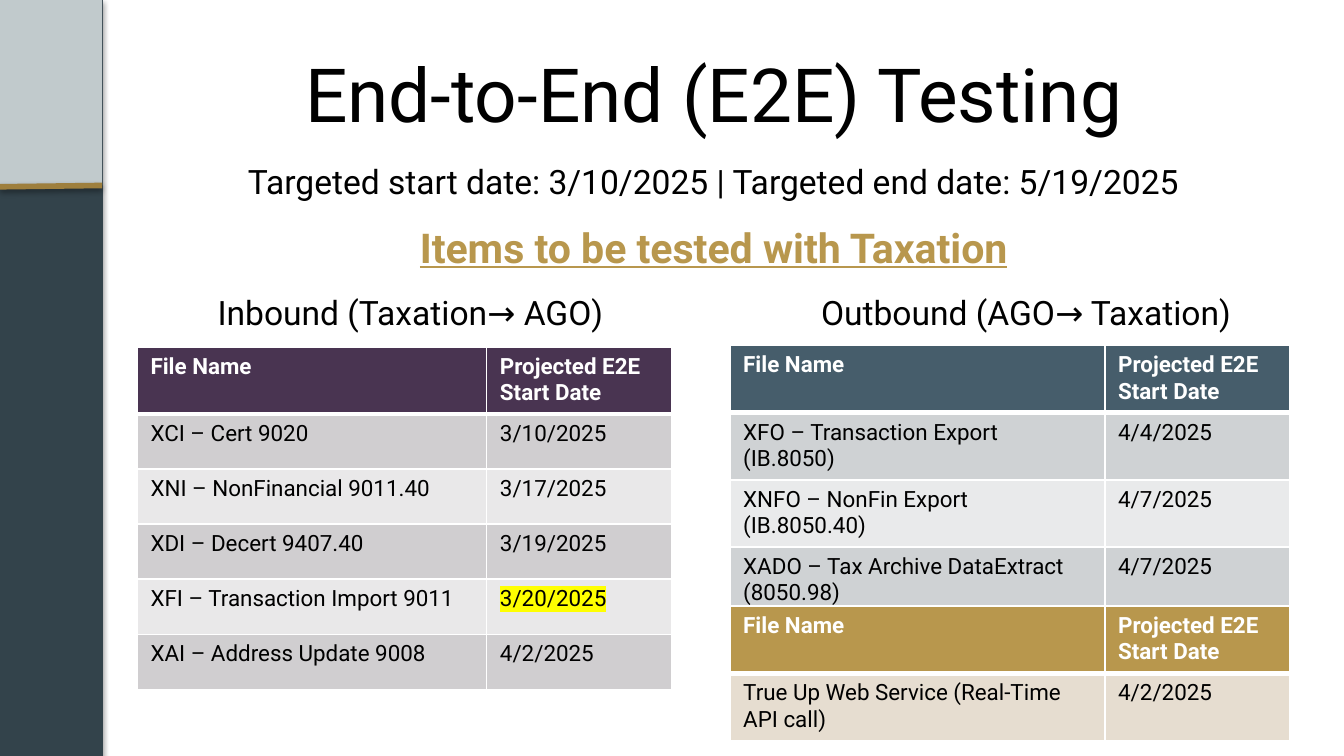
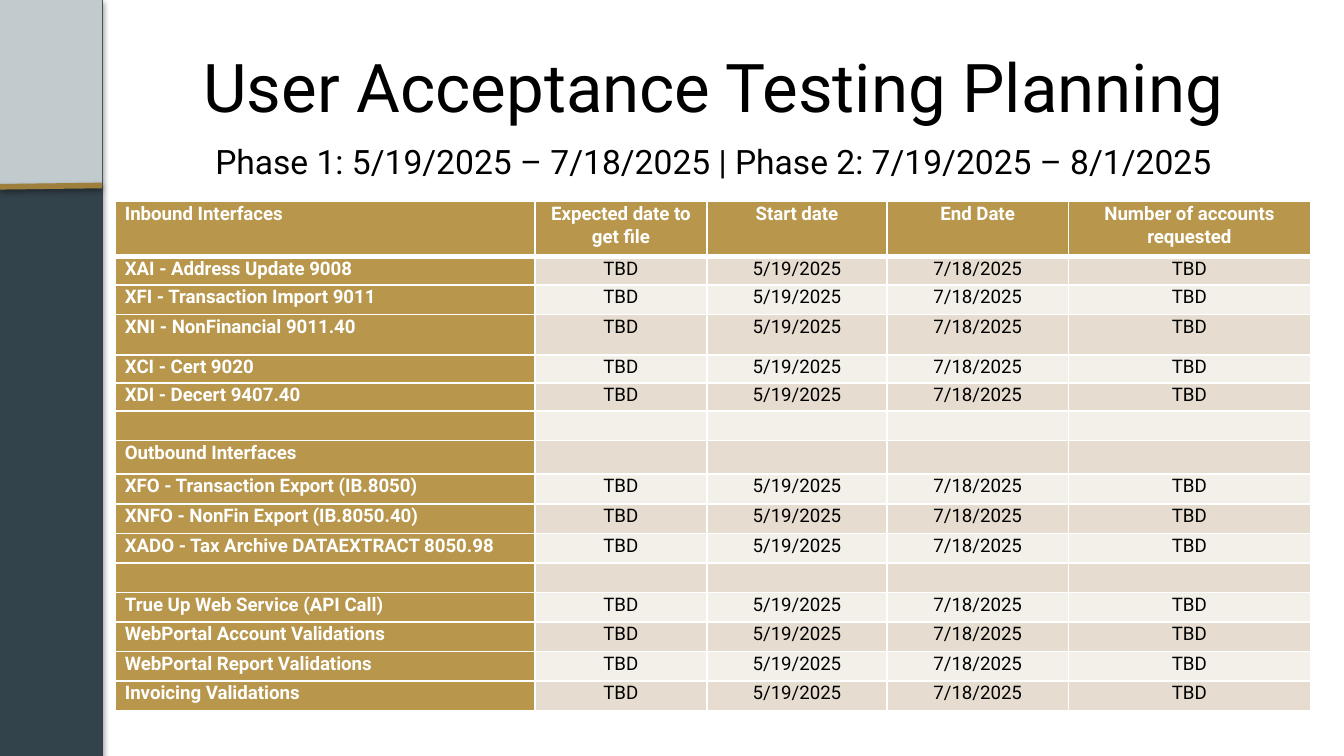
from dataclasses import dataclass
from typing import NamedTuple

from lxml.etree import SubElement
from pptx import Presentation
from pptx.dml.color import RGBColor
from pptx.enum.shapes import MSO_CONNECTOR, MSO_SHAPE
from pptx.enum.text import MSO_ANCHOR, MSO_AUTO_SIZE, PP_ALIGN
from pptx.oxml.ns import qn
from pptx.util import Inches, Pt

FONT = "Roboto"
SLIDE_WIDTH = 10
SLIDE_HEIGHT = SLIDE_WIDTH * 9 / 16
BAND_WIDTH = 0.76
COLORS = {
    "text": "000000",
    "white": "FFFFFF",
    "slate": "33434B",
    "mist": "C1CACC",
    "bronze": "9E7F3D",
    "gold": "B8974D",
    "gold_dark": "E6DDD0",
    "gold_light": "F3EFE9",
    "plum": "493451",
    "plum_dark": "D0CED0",
    "plum_light": "E9E8E9",
    "steel": "465D6B",
    "steel_dark": "CFD2D4",
    "steel_light": "E9EAEB",
    "highlight": "FFFF00",
}


class Box(NamedTuple):
    left: float
    top: float
    width: float
    height: float

    def lengths(self) -> list:
        return [Inches(value) for value in self]


@dataclass
class Line:
    text: str
    size: float = 18
    color: str = "text"
    bold: bool = False
    underline: bool = False
    align: PP_ALIGN = PP_ALIGN.CENTER
    space_before: float = 0
    tab_stops: tuple = ()


@dataclass
class Grid:
    """A table whose palette names its header colour and its two row bands."""
    left: float
    top: float
    widths: list
    heights: list
    rows: list
    palette: str
    size: float = 12
    inset_x: float = 0.1
    inset_y: float = 0.05
    interface_list: bool = False
    highlighted: str = ""


def rgb(name: str) -> RGBColor:
    return RGBColor.from_string(COLORS[name])


def format_runs(paragraph, size: float, color: str, bold: bool = False,
                underline: bool = False) -> None:
    for run in paragraph.runs:
        run.font.name = FONT
        run.font.size = Pt(size)
        run.font.bold = bold
        run.font.underline = underline
        run.font.color.rgb = rgb(color)


def add_shadow(shape, alpha: int, distance: float) -> None:
    properties = shape._element.spPr
    for effects in properties.findall(qn("a:effectLst")):
        properties.remove(effects)
    effects = SubElement(properties, qn("a:effectLst"))
    shadow = SubElement(effects, qn("a:outerShdw"), blurRad=str(Pt(3.1)),
                        dist=str(Pt(distance)), dir="5400000", rotWithShape="0")
    color = SubElement(shadow, qn("a:srgbClr"), val=COLORS["text"])
    SubElement(color, qn("a:alpha"), val=str(alpha * 1000))


def add_band(slide, height: float, color: str):
    band = slide.shapes.add_shape(
        MSO_SHAPE.RECTANGLE, *Box(0, 0, BAND_WIDTH, height).lengths())
    band.shadow.inherit = False
    band.fill.solid()
    band.fill.fore_color.rgb = rgb(color)
    band.line.fill.background()
    return band


def add_side_bands(slide) -> None:
    side = add_band(slide, SLIDE_HEIGHT, "slate")
    side.line.color.rgb = rgb("slate")
    side.line.width = Pt(0.75)
    add_shadow(side, 35, 1.8)
    add_band(slide, 1.38, "mist")
    rule = slide.shapes.add_connector(
        MSO_CONNECTOR.STRAIGHT, Inches(0), Inches(1.39), Inches(BAND_WIDTH), Inches(1.38))
    rule.line.color.rgb = rgb("bronze")
    rule.line.width = Pt(3)
    add_shadow(rule, 38, 1.6)


def add_titled_slide(presentation, text: str, size: float, top: float):
    slide = presentation.slides.add_slide(presentation.slide_layouts[5])
    add_side_bands(slide)
    title = slide.shapes.title
    title.left, title.top, title.width, title.height = Box(1.02, top, 8.58, 0.94).lengths()
    frame = title.text_frame
    frame.text = text
    frame.auto_size = MSO_AUTO_SIZE.NONE
    frame.vertical_anchor = MSO_ANCHOR.MIDDLE
    frame.paragraphs[0].alignment = PP_ALIGN.CENTER
    format_runs(frame.paragraphs[0], size, "text")
    return slide


def add_text(slide, box: Box, lines: list) -> None:
    frame = slide.shapes.add_textbox(*box.lengths()).text_frame
    frame.word_wrap = True
    for index, line in enumerate(lines):
        paragraph = frame.add_paragraph() if index else frame.paragraphs[0]
        paragraph.text = line.text
        paragraph.alignment = line.align
        paragraph.space_before = Pt(line.space_before)
        format_runs(paragraph, line.size, line.color, line.bold, line.underline)
        if line.tab_stops:
            stops = SubElement(paragraph._p.get_or_add_pPr(), qn("a:tabLst"))
            for stop in line.tab_stops:
                SubElement(stops, qn("a:tab"), pos=str(Inches(stop)), algn="l")


def set_borders(cell, top: float, bottom: float) -> None:
    properties = cell._tc.get_or_add_tcPr()
    for side, width in (("L", 1), ("R", 1), ("T", top), ("B", bottom)):
        border = SubElement(properties, qn(f"a:ln{side}"), w=str(Pt(width)))
        fill = SubElement(border, qn("a:solidFill"))
        SubElement(fill, qn("a:srgbClr"), val=COLORS["white"])


def highlight(run) -> None:
    mark = run._r.makeelement(qn("a:highlight"), {})
    SubElement(mark, qn("a:srgbClr"), val=COLORS["highlight"])
    run._r.rPr.find(qn("a:latin")).addprevious(mark)


def fill_cell(cell, text: str, grid: Grid, row: int, column: int) -> None:
    is_head = row == 0 or (grid.interface_list and column == 0)
    band = "dark" if row % 2 else "light"
    set_borders(cell, top=3 if row == 1 else 1, bottom=3 if row == 0 else 1)
    cell.fill.solid()
    cell.fill.fore_color.rgb = rgb(grid.palette if is_head else f"{grid.palette}_{band}")
    cell.margin_left = cell.margin_right = Inches(grid.inset_x)
    cell.margin_top = cell.margin_bottom = Inches(grid.inset_y)
    paragraph = cell.text_frame.paragraphs[0]
    if grid.interface_list:
        paragraph.line_spacing = 1.07
        paragraph.space_after = Pt(8)
        paragraph.alignment = PP_ALIGN.CENTER if column else PP_ALIGN.LEFT
    if not text:
        SubElement(paragraph._p, qn("a:endParaRPr"), sz=str(int(grid.size * 100)))
        return
    paragraph.text = text
    format_runs(paragraph, grid.size, "white" if is_head else "text", is_head)
    if text == grid.highlighted:
        highlight(paragraph.runs[0])


def add_grid(slide, grid: Grid) -> None:
    box = Box(grid.left, grid.top, sum(grid.widths), sum(grid.heights))
    table = slide.shapes.add_table(
        len(grid.rows), len(grid.widths), *box.lengths()).table
    table.horz_banding = False
    for column, width in zip(table.columns, grid.widths):
        column.width = Inches(width)
    for row_index, (height, texts) in enumerate(zip(grid.heights, grid.rows)):
        table.rows[row_index].height = Inches(height)
        for column_index, text in enumerate(texts):
            fill_cell(table.cell(row_index, column_index), text, grid,
                      row_index, column_index)


def add_file_grid(slide, left: float, top: float, name_width: float, palette: str,
                  files: list, highlighted: str = "") -> None:
    rows = [("File Name", "Projected E2E Start Date"), *files]
    add_grid(slide, Grid(left, top, [name_width, 1.38], [0.41] * len(rows), rows,
                         palette, highlighted=highlighted))


def build_end_to_end(presentation) -> None:
    slide = add_titled_slide(presentation, "End-to-End (E2E) Testing", 40, 0.22)
    add_text(slide, Box(1.02, 1.15, 8.58, 1.41), [
        Line("Targeted start date: 3/10/2025 | Targeted end date: 5/19/2025"),
        Line("Items to be tested with Taxation", 22, "gold", bold=True, underline=True,
             space_before=11),
        Line("\tInbound (Taxation→ AGO)\tOutbound (AGO→ Taxation)", align=PP_ALIGN.LEFT,
             space_before=11, tab_stops=(0.5, 4.99)),
    ])
    add_file_grid(slide, 1.02, 2.58, 2.6, "plum", [
        ("XCI – Cert 9020", "3/10/2025"),
        ("XNI – NonFinancial 9011.40", "3/17/2025"),
        ("XDI – Decert 9407.40", "3/19/2025"),
        ("XFI – Transaction Import 9011", "3/20/2025"),
        ("XAI – Address Update 9008", "4/2/2025"),
    ], highlighted="3/20/2025")
    add_file_grid(slide, 5.43, 2.57, 2.79, "steel", [
        ("XFO – Transaction Export (IB.8050)", "4/4/2025"),
        ("XNFO – NonFin Export (IB.8050.40)", "4/7/2025"),
        ("XADO – Tax Archive DataExtract (8050.98)", "4/7/2025"),
    ])
    add_file_grid(slide, 5.43, 4.51, 2.79, "gold", [
        ("True Up Web Service (Real-Time API call)", "4/2/2025"),
    ])


def build_user_acceptance(presentation) -> None:
    slide = add_titled_slide(presentation, "User Acceptance Testing Planning", 36, 0.17)
    header = ("Inbound Interfaces", "Expected date to get file", "Start date",
              "End Date", "Number of accounts requested")
    schedule = ("TBD", "5/19/2025", "7/18/2025", "TBD")
    unscheduled = ("", "Outbound Interfaces")
    interfaces = [
        "XAI - Address Update 9008",
        "XFI - Transaction Import 9011",
        "XNI - NonFinancial 9011.40",
        "XCI - Cert 9020",
        "XDI - Decert 9407.40",
        "",
        "Outbound Interfaces",
        "XFO - Transaction Export (IB.8050)",
        "XNFO - NonFin Export (IB.8050.40)",
        "XADO - Tax Archive DATAEXTRACT 8050.98",
        "",
        "True Up Web Service (API Call)",
        "WebPortal Account Validations",
        "WebPortal Report Validations",
        "Invoicing Validations",
    ]
    rows = [header] + [
        (name, *(("",) * 4 if name in unscheduled else schedule)) for name in interfaces]
    heights = [0.41, 0.21, 0.22, 0.3, 0.21, 0.21, 0.22, 0.25] + [0.22] * 8
    add_grid(slide, Grid(0.86, 1.5, [3.12, 1.28, 1.34, 1.35, 1.8], heights, rows, "gold",
                         size=10, inset_x=0.07, inset_y=0, interface_list=True))
    add_text(slide, Box(0.86, 1, 8.9, 0.4), [
        Line("Phase 1: 5/19/2025 – 7/18/2025 | Phase 2: 7/19/2025 – 8/1/2025")])


def main() -> None:
    presentation = Presentation()
    presentation.slide_width = Inches(SLIDE_WIDTH)
    presentation.slide_height = Inches(SLIDE_HEIGHT)
    build_end_to_end(presentation)
    build_user_acceptance(presentation)
    presentation.save("out.pptx")


if __name__ == "__main__":
    main()
